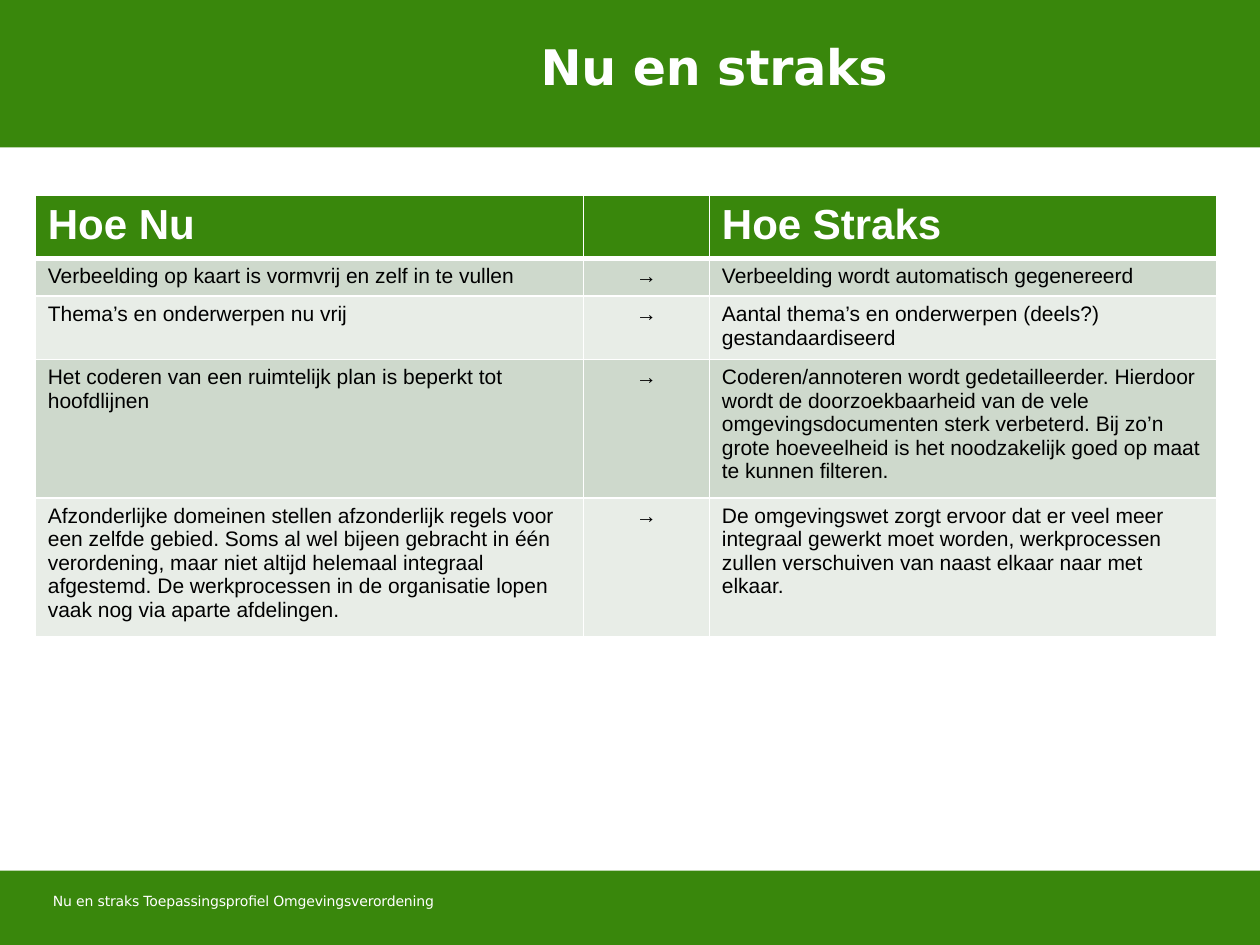
"""Build the 'Nu en straks' slide: a comparison table between two green bands."""
import pptx
import pptx.dml.color
import pptx.enum.shapes
import pptx.enum.text
import pptx.oxml.ns
import pptx.util
from lxml import etree

TITLE = "Nu en straks"
FOOTER = "Nu en straks Toepassingsprofiel Omgevingsverordening"
HEADER = ("Hoe Nu", "", "Hoe Straks")
PAIRS = [
    ("Verbeelding op kaart is vormvrij en zelf in te vullen",
     "Verbeelding wordt automatisch gegenereerd"),
    ("Thema’s en onderwerpen nu vrij",
     "Aantal thema’s en onderwerpen (deels?) gestandaardiseerd"),
    ("Het coderen van een ruimtelijk plan is beperkt tot hoofdlijnen",
     "Coderen/annoteren wordt gedetailleerder. Hierdoor wordt de doorzoekbaarheid van de vele "
     "omgevingsdocumenten sterk verbeterd. Bij zo’n grote hoeveelheid is het noodzakelijk goed "
     "op maat te kunnen filteren."),
    ("Afzonderlijke domeinen stellen afzonderlijk regels voor een zelfde gebied. Soms al wel "
     "bijeen gebracht in één verordening, maar niet altijd helemaal integraal afgestemd. De "
     "werkprocessen in de organisatie lopen vaak nog via aparte afdelingen.",
     "De omgevingswet zorgt ervoor dat er veel meer integraal gewerkt moet worden, "
     "werkprocessen zullen verschuiven van naast elkaar naar met elkaar."),
]
ROWS = [HEADER] + [(now, "→", later) for now, later in PAIRS]

THEME = {
    "green": "39870C", "white": "FFFFFF", "black": "000000", "bands": ("CED9CC", "E8EDE7"),
    "band_font": "DejaVu Sans", "table_font": "Arial",
    "title": 28, "footer": 8, "header": 24, "body": 12, "line": 1, "header_line": 3,
}
W, H = 10, 7.5
TOP_BAND, BOTTOM_BAND = 1.17, 0.59
TABLE_LEFT, TABLE_TOP = 0.28, 1.55
COLS = (4.35, 1, 4.03)
ROW_HEIGHTS = (0.48, 0.29, 0.47, 1.04, 1.04)


def rgb(color):
    return pptx.dml.color.RGBColor.from_string(color)


def box(*lengths):
    return [pptx.util.Inches(n) for n in lengths]


def style(p, font, size, color, bold=False):
    for r in p.runs:
        r.font.name, r.font.size, r.font.bold = font, pptx.util.Pt(size), bold
        r.font.color.rgb = rgb(color)


def add_band(s, top, height):
    sp = s.shapes.add_shape(pptx.enum.shapes.MSO_SHAPE.RECTANGLE, *box(0, top, W, height))
    sp.shadow.inherit = False
    sp.fill.solid()
    sp.fill.fore_color.rgb = rgb(THEME["green"])
    sp.line.fill.background()


def add_label(s, text, size, place, bold=False):
    tf = s.shapes.add_textbox(*box(*place)).text_frame
    tf.word_wrap = True
    tf.margin_left = tf.margin_top = tf.margin_right = tf.margin_bottom = 0
    p = tf.paragraphs[0]
    p.text = text
    style(p, THEME["band_font"], size, THEME["white"], bold)
    for r in p.runs:
        r.font._element.set("spc", "-10")


def set_borders(cell, top, bottom):
    qn = pptx.oxml.ns.qn
    tcPr = cell._tc.get_or_add_tcPr()
    side = THEME["line"]
    for tag, width in (("a:lnL", side), ("a:lnR", side), ("a:lnT", top), ("a:lnB", bottom)):
        ln = etree.SubElement(tcPr, qn(tag), w=str(pptx.util.Pt(width)))
        fill = etree.SubElement(ln, qn("a:solidFill"))
        etree.SubElement(fill, qn("a:srgbClr"), val=THEME["white"])


def add_comparison(s):
    place = box(TABLE_LEFT, TABLE_TOP, sum(COLS), sum(ROW_HEIGHTS))
    table = s.shapes.add_table(len(ROWS), len(COLS), *place).table
    for col, width in zip(table.columns, COLS):
        col.width = pptx.util.Inches(width)
    for i, row in enumerate(ROWS):
        table.rows[i].height = pptx.util.Inches(ROW_HEIGHTS[i])
        header = i == 0
        fill = THEME["green"] if header else THEME["bands"][(i - 1) % 2]
        size = THEME["header"] if header else THEME["body"]
        color = THEME["white"] if header else THEME["black"]
        top = THEME["header_line"] if i == 1 else THEME["line"]
        bottom = THEME["header_line"] if header else THEME["line"]
        for j, text in enumerate(row):
            cell = table.cell(i, j)
            set_borders(cell, top, bottom)
            cell.fill.solid()
            cell.fill.fore_color.rgb = rgb(fill)
            p = cell.text_frame.paragraphs[0]
            p.text = text
            if j == 1:
                p.alignment = pptx.enum.text.PP_ALIGN.CENTER
            style(p, THEME["table_font"], size, color, header)


def main():
    prs = pptx.Presentation()
    prs.slide_width, prs.slide_height = box(W, H)
    s = prs.slides.add_slide(prs.slide_layouts[6])
    add_band(s, H - BOTTOM_BAND, BOTTOM_BAND)
    add_band(s, 0, TOP_BAND)
    add_label(s, TITLE, THEME["title"], (4.29, 0.29, 9.21, 0.63), bold=True)
    add_label(s, FOOTER, THEME["footer"], (0.42, 7.08, 6.92, 0.25))
    add_comparison(s)
    prs.save("out.pptx")


if __name__ == "__main__":
    main()
